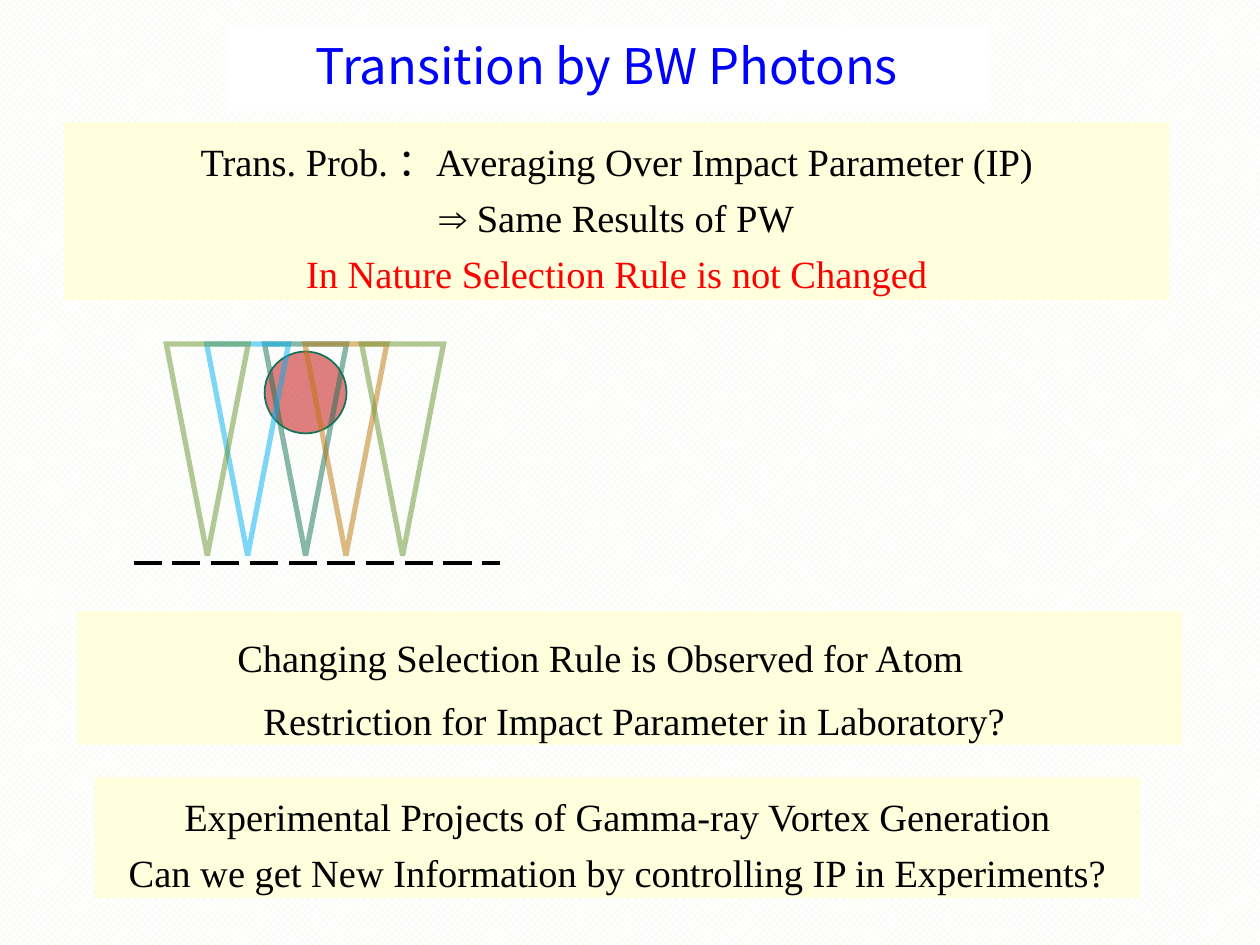
from lxml import etree
from pptx import Presentation
from pptx.dml.color import RGBColor
from pptx.enum import dml, shapes, text
from pptx.oxml.ns import qn
from pptx.util import Inches, Pt

WHITE = RGBColor(0xFF, 0xFF, 0xFF)
BLACK = RGBColor(0, 0, 0)
BLUE = RGBColor(0, 0, 0xFF)
RED = RGBColor(0xFF, 0, 0)
CREAM = RGBColor(0xFF, 0xFF, 0xDD)
PALE_GREEN = RGBColor(0xF1, 0xF8, 0xE8)
CRIMSON = RGBColor(0xC0, 0, 0)
TEAL = RGBColor(0x15, 0x72, 0x59)
OCHRE = RGBColor(0xBC, 0x77, 0x0B)
SKY = RGBColor(0, 0xB0, 0xF0)
OLIVE = RGBColor(0x69, 0x93, 0x31)


def set_background(s):
    """Give the slide its fine checked pattern."""
    fill = s.background.fill
    fill.patterned()
    fill.pattern = dml.MSO_PATTERN.LARGE_CHECKER_BOARD
    fill.fore_color.rgb = PALE_GREEN
    fill.back_color.rgb = WHITE


def set_half_transparent(sp):
    """Make the colours of a shape's fill and line half transparent."""
    for color in sp._element.spPr.iter(qn("a:srgbClr")):
        etree.SubElement(color, qn("a:alpha"), val="50000")


def add_panel(s, left, top, width, height, fill, right_inset=0.1):
    """Add a filled text box and return its text frame."""
    sp = s.shapes.add_textbox(Inches(left), Inches(top), Inches(width), Inches(height))
    sp.fill.solid()
    sp.fill.fore_color.rgb = fill
    tf = sp.text_frame
    tf.word_wrap = True
    tf.margin_right = Inches(right_inset)
    return tf


def write_line(p, words, size=22, font="Times New Roman", color=BLACK, spacing=Pt(32), indent=0):
    """Write one centred line of text into a paragraph."""
    p.alignment = text.PP_ALIGN.CENTER
    p.line_spacing = spacing
    if indent:
        pPr = p._p.get_or_add_pPr()
        pPr.set("marL", str(Inches(indent)))
        pPr.set("indent", "0")
    r = p.add_run()
    r.text = words
    r.font.size = Pt(size)
    r.font.name = font
    r.font.color.rgb = color


def add_title(s, left, top, width, height):
    """Add the slide title."""
    tf = add_panel(s, left, top, width, height, WHITE)
    tf.vertical_anchor = text.MSO_ANCHOR.MIDDLE
    write_line(tf.paragraphs[0], "Transition by BW Photons", size=28,
               font="Noto Sans CJK JP", color=BLUE, spacing=0.9)


def add_statement(s, left, top, width, height, lines, right_inset=0.1):
    """Add a cream panel with one paragraph for each (words, format) pair."""
    tf = add_panel(s, left, top, width, height, CREAM, right_inset)
    for i, (words, style) in enumerate(lines):
        p = tf.add_paragraph() if i else tf.paragraphs[0]
        write_line(p, words, **style)


def add_cone(group, left, top, width, height, color):
    """Add one downward photon cone."""
    sp = group.shapes.add_shape(shapes.MSO_SHAPE.ISOSCELES_TRIANGLE, Inches(left),
                                Inches(top), Inches(width), Inches(height))
    sp.shadow.inherit = False
    sp.rotation = 180
    sp.fill.background()
    sp.line.color.rgb = color
    sp.line.width = Pt(3)
    etree.SubElement(sp.line._get_or_add_ln(), qn("a:miter"), lim="800000")
    set_half_transparent(sp)


def add_cone_diagram(s, left, top, width, height):
    """Add the atom, the photon cones and the dashed base line."""
    group = s.shapes.add_group_shape()
    size = 0.65
    atom = group.shapes.add_shape(shapes.MSO_SHAPE.OVAL, Inches(left + 1.04),
                                  Inches(top + 0.06), Inches(size), Inches(size))
    atom.shadow.inherit = False
    atom.fill.solid()
    atom.fill.fore_color.rgb = CRIMSON
    set_half_transparent(atom)
    atom.line.color.rgb = TEAL
    atom.line.width = Pt(1)

    cones = [(1.04, TEAL), (1.36, OCHRE), (0.58, SKY), (1.81, OLIVE), (0.26, OLIVE)]
    for offset, color in cones:
        add_cone(group, left + offset, top, size, height - 0.06, color)

    y = Inches(top + height)
    base = group.shapes.add_connector(shapes.MSO_CONNECTOR.STRAIGHT, Inches(left), y,
                                      Inches(left + width), y)
    base.line.color.rgb = BLACK
    base.line.width = Pt(2)
    base.line.dash_style = dml.MSO_LINE.LONG_DASH
    etree.SubElement(base._element.spPr, qn("a:effectLst"))


def main():
    """Build the slide and save it."""
    prs = Presentation()
    prs.slide_width, prs.slide_height = Inches(10), Inches(7.5)
    s = prs.slides.add_slide(prs.slide_layouts[6])
    set_background(s)
    add_title(s, 1.8, 0.21, 6.03, 0.67)
    add_statement(s, 0.51, 0.97, 8.77, 1.41, [
        ("Trans. Prob. ：Averaging Over Impact Parameter (IP)", {}),
        ("⇒ Same Results of PW", {}),
        ("In Nature Selection Rule is not Changed", {"color": RED}),
    ])
    add_cone_diagram(s, 1.06, 2.73, 2.91, 1.74)
    add_statement(s, 0.61, 4.85, 8.77, 1.06, [
        ("Changing Selection Rule is Observed for Atom", {"spacing": Pt(36)}),
        ("Restriction for Impact Parameter in Laboratory?",
         {"spacing": Pt(36), "indent": 0.54}),
    ], right_inset=0.56)
    add_statement(s, 0.75, 6.17, 8.3, 0.96, [
        ("Experimental Projects of Gamma-ray Vortex Generation", {}),
        ("Can we get New Information by controlling IP in Experiments?", {}),
    ])
    prs.save("out.pptx")


if __name__ == "__main__":
    main()
